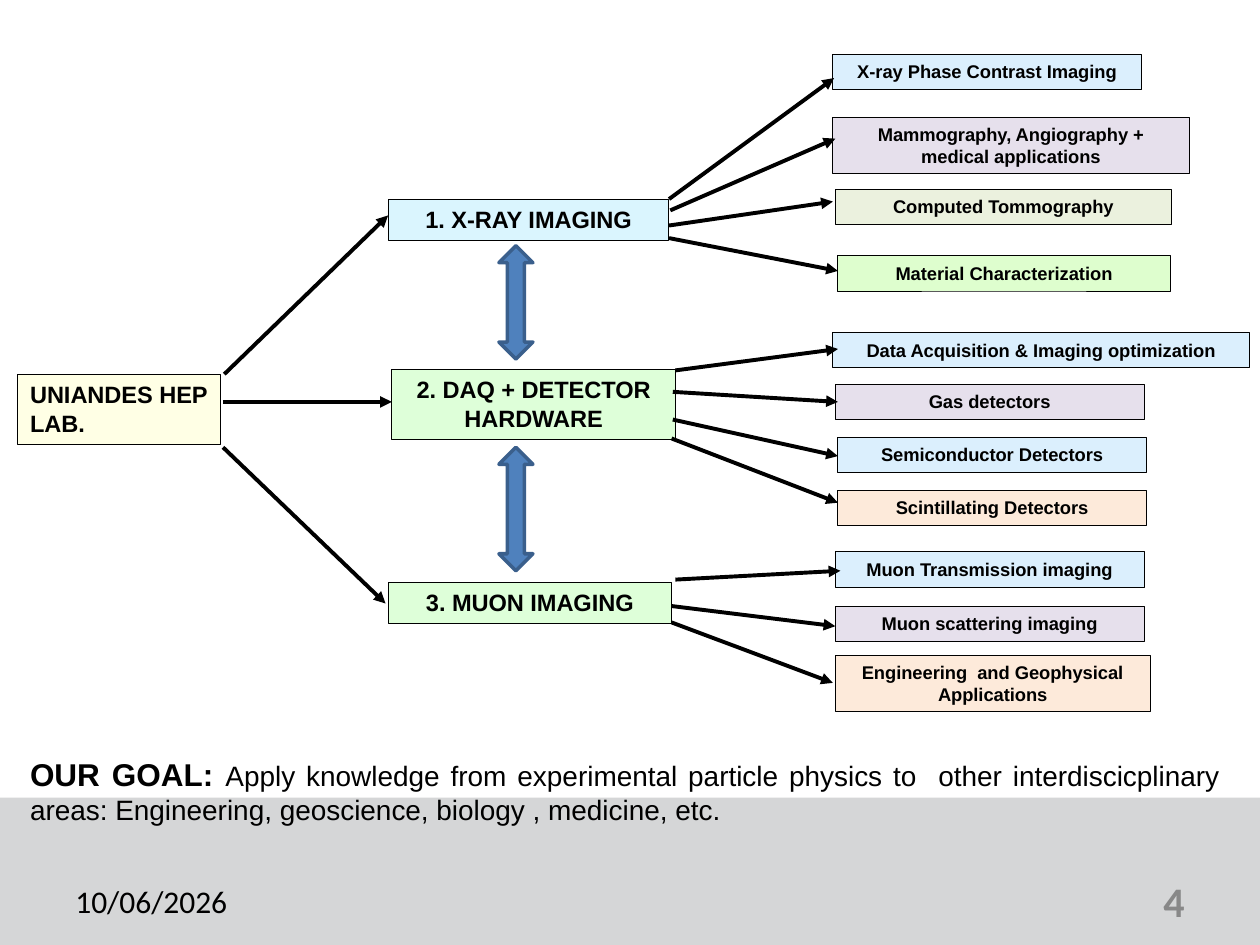
from lxml.etree import SubElement
from pptx import Presentation
from pptx.dml.color import RGBColor
from pptx.enum.shapes import MSO_CONNECTOR, MSO_SHAPE
from pptx.enum.text import MSO_ANCHOR, MSO_AUTO_SIZE, PP_ALIGN
from pptx.oxml.ns import qn
from pptx.util import Emu, Pt

PX = 9144
COLORS = {
    "black": "000000", "band": "D5D6D7", "number": "888888",
    "cream": "FFFFCC", "cyan": "DAF5FE", "mint": "DEFFD9",
    "sky": "DBEFFD", "lilac": "E6E0EC", "olive": "EBF1DE",
    "lime": "DEFECE", "peach": "FDEADA",
    "blue": "4F81BD", "navy": "3A5F8C",
}
BRANCHES = [
    ((308, 43), ("1. X-RAY IMAGING", (0, 115, 223, 33), "cyan"), [
        ("X-ray Phase Contrast Imaging", (353, 0, 245, 28), "sky", (223, 115), (354, 19)),
        ("Mammography, Angiography + medical applications",
         (353, 50, 283, 45), "lilac", (224, 124), (355, 67)),
        ("Computed Tommography", (355, 107, 267, 28), "olive", (223, 136), (353, 117)),
        ("Material Characterization", (357, 160, 264, 28), "lime", (223, 146), (357, 172)),
    ]),
    ((308, 264), ("2. DAQ + DETECTOR HARDWARE", (3, 29, 225, 56), "mint"), [
        ("Data Acquisition & Imaging optimization",
         (353, 0, 331, 28), "sky", (228, 30), (357, 13)),
        ("Gas detectors", (355, 41, 245, 28), "lilac", (226, 47), (357, 55)),
        ("Semiconductor Detectors", (357, 83, 245, 28), "sky", (226, 69), (357, 98)),
        ("Scintillating Detectors", (357, 125, 245, 28), "peach", (225, 84), (357, 135)),
    ]),
    ((308, 438), ("3. MUON IMAGING", (0, 24, 225, 33), "mint"), [
        ("Muon Transmission imaging", (355, 0, 245, 28), "sky", (228, 22), (359, 15)),
        ("Muon scattering imaging", (355, 43, 245, 28), "lilac", (225, 43), (355, 59)),
        ("Engineering  and Geophysical Applications",
         (355, 82, 250, 45), "peach", (225, 56), (353, 104)),
    ]),
]


def color(name):
    """Return the named colour."""
    return RGBColor.from_string(COLORS[name])


def emu(lengths):
    """Turn px lengths into EMU."""
    return [Emu(length * PX) for length in lengths]


def shift(origin, box):
    """Move a point or box by an origin."""
    return (origin[0] + box[0], origin[1] + box[1], *box[2:])


def style(span, size, bold=False, ink="black", face="Arial"):
    """Format one run of text."""
    span.font.name = face
    span.font.size = Pt(size)
    span.font.bold = bold
    span.font.color.rgb = color(ink)


def add_block(page, kind, box, fill, line=None, weight=0.5):
    """Draw a filled preset shape."""
    shape = page.shapes.add_shape(kind, *emu(box))
    shape.shadow.inherit = False
    shape.fill.solid()
    shape.fill.fore_color.rgb = color(fill)
    if line:
        shape.line.color.rgb = color(line)
        shape.line.width = Pt(weight)
    else:
        shape.line.fill.background()
    return shape


def add_label(page, box, text, fill, size, align=PP_ALIGN.CENTER, weight=0.5):
    """Draw an outlined box with bold text."""
    shape = add_block(page, MSO_SHAPE.RECTANGLE, box, fill, "black", weight)
    frame = shape.text_frame
    frame.text = text
    frame.word_wrap = True
    frame.auto_size = MSO_AUTO_SIZE.SHAPE_TO_FIT_TEXT
    frame.vertical_anchor = MSO_ANCHOR.TOP
    para = frame.paragraphs[0]
    para.alignment = align
    style(para.runs[0], size, True)
    return shape


def add_arrow(page, start, end):
    """Draw a black line with an arrowhead at its end."""
    arrow = page.shapes.add_connector(MSO_CONNECTOR.STRAIGHT, *emu(start + end))
    arrow.line.color.rgb = color("black")
    arrow.line.width = Pt(2.25)
    SubElement(arrow.line._get_or_add_ln(), qn("a:tailEnd"), type="triangle")
    SubElement(arrow._element.spPr, qn("a:effectLst"))


def add_text(page, box, spans, align, anchor=MSO_ANCHOR.TOP):
    """Add a text box of one paragraph made of formatted runs."""
    frame = page.shapes.add_textbox(*emu(box)).text_frame
    frame.word_wrap = True
    frame.vertical_anchor = anchor
    para = frame.paragraphs[0]
    para.alignment = align
    for text, *look in spans:
        span = para.add_run()
        span.text = text
        style(span, *look)


def add_root(page, origin):
    """Draw the laboratory box and its arrows to the branches."""
    root = add_label(page, (*origin, 161, 56), "UNIANDES HEP LAB.", "cream",
                     13.5, PP_ALIGN.LEFT, 0.75)
    fill = root._element.spPr.find(qn("a:solidFill"))
    SubElement(fill[0], qn("a:alpha"), val="50000")
    for start, end in [((164, 0), (294, -126)), ((163, 22), (297, 22)),
                       ((163, 58), (292, 182))]:
        add_arrow(page, shift(origin, start), shift(origin, end))


def add_branch(page, origin, hub, topics):
    """Draw a hub box, its topic boxes and the arrows between them."""
    text, box, fill = hub
    add_label(page, shift(origin, box), text, fill, 13.5)
    for text, box, fill, start, end in topics:
        add_label(page, shift(origin, box), text, fill, 10.5)
        add_arrow(page, shift(origin, start), shift(origin, end))


def add_links(page, origin):
    """Draw the two-way arrows between the hubs."""
    for top, height in [(0, 90), (160, 98)]:
        add_block(page, MSO_SHAPE.UP_DOWN_ARROW, shift(origin, (0, top, 27, height)),
                  "blue", "navy", 2)


def add_footer(page, origin):
    """Write the date and the slide number."""
    add_text(page, shift(origin, (0, 0, 233, 40)),
             [("10/06/2026", 18, False, "black", "Calibri")],
             PP_ALIGN.LEFT, MSO_ANCHOR.MIDDLE)
    add_text(page, shift(origin, (667, 0, 233, 40)),
             [("4", 24, True, "number", "Calibri")],
             PP_ALIGN.RIGHT, MSO_ANCHOR.MIDDLE)


def main():
    """Build the slide and save it."""
    deck = Presentation()
    deck.slide_width, deck.slide_height = emu((1000, 750))
    page = deck.slides.add_slide(deck.slide_layouts[6])
    add_block(page, MSO_SHAPE.RECTANGLE, (0, 633, 1000, 117), "band")
    add_root(page, (14, 297))
    for branch in BRANCHES:
        add_branch(page, *branch)
    add_links(page, (396, 195))
    add_text(page, (14, 594, 964, 67), [
        ("OUR GOAL: ", 18, True),
        ("Apply knowledge from experimental particle physics to  other "
         "interdiscicplinary areas: Engineering, geoscience, biology , "
         "medicine, etc.", 16),
    ], PP_ALIGN.JUSTIFY)
    add_footer(page, (50, 695))
    deck.save("out.pptx")


if __name__ == "__main__":
    main()
